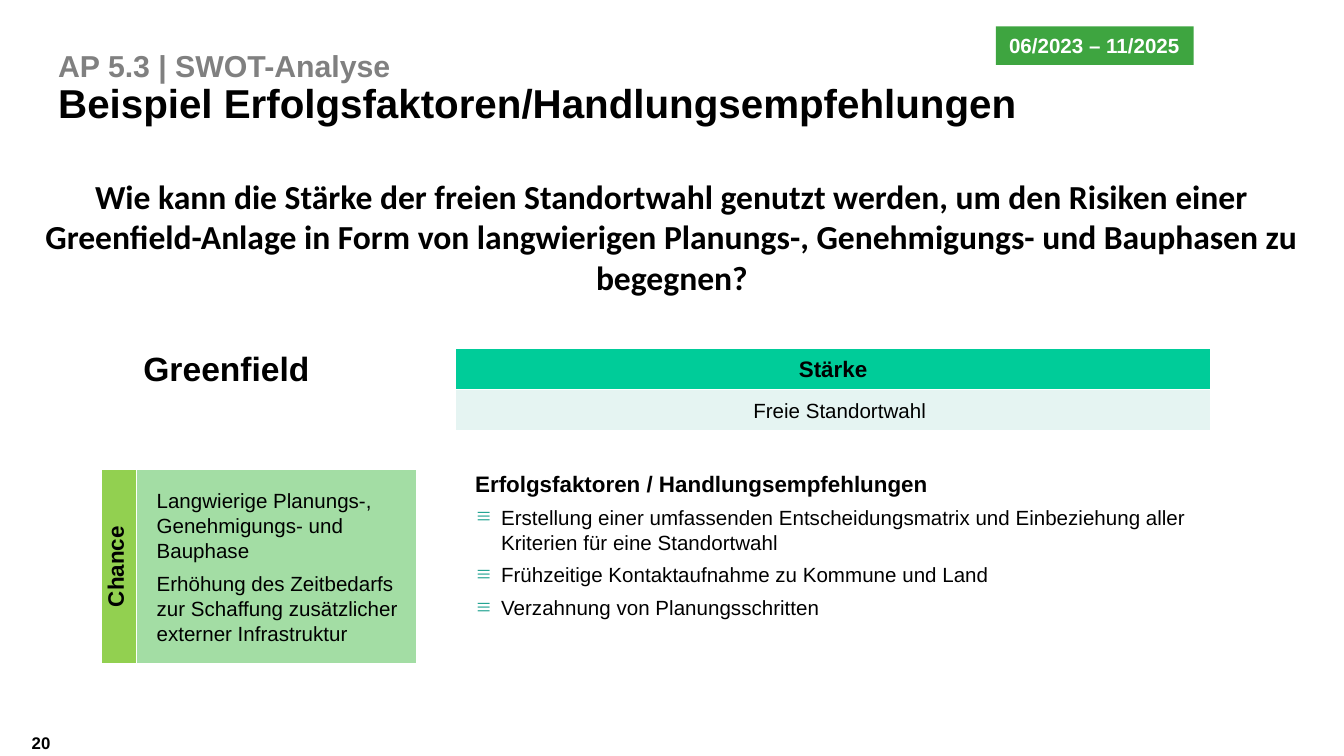
import lxml.etree
import pptx
import pptx.dml.color
import pptx.enum.shapes
import pptx.enum.text
import pptx.oxml.ns
import pptx.util

Cm = pptx.util.Cm
Pt = pptx.util.Pt
ALIGN = pptx.enum.text.PP_ALIGN
ANCHOR = pptx.enum.text.MSO_ANCHOR
qn = pptx.oxml.ns.qn

COLORS = {
    "black": "000000",
    "white": "FFFFFF",
    "gray": "808080",
    "badge": "3EA540",
    "strength": "00CC99",
    "strength_light": "E5F4F2",
    "chance": "92D050",
    "chance_light": "A3DDA4",
    "bullet": "009682",
}


def rgb(color):
    return pptx.dml.color.RGBColor.from_string(COLORS[color])


def write_text(paragraph, text, size=11, bold=False, color="black", font="Arial",
               align=ALIGN.LEFT, line_spacing=1.0, before=0, after=0,
               left=0, hanging=0, bullet=None):
    """Append a run; left and hanging are the paragraph's indents in cm."""
    paragraph.alignment = align
    paragraph.line_spacing = line_spacing
    paragraph.space_before, paragraph.space_after = Pt(before), Pt(after)
    properties = paragraph._p.get_or_add_pPr()
    properties.set("marL", str(Cm(left)))
    properties.set("indent", str(-Cm(hanging)))
    if bullet:
        bullet_color = lxml.etree.SubElement(properties, qn("a:buClr"))
        lxml.etree.SubElement(bullet_color, qn("a:srgbClr"), val=COLORS["bullet"])
        lxml.etree.SubElement(properties, qn("a:buChar"), char=bullet)
    run = paragraph.add_run()
    run.text = text
    run.font.size, run.font.bold, run.font.name = Pt(size), bold, font
    run.font.color.rgb = rgb(color)


class SlideBuilder:
    def __init__(self, slide):
        self.slide = slide

    def text_box(self, left, top, width, height, anchor=ANCHOR.TOP, margins=True):
        """Add an empty text box and return its first paragraph."""
        shape = self.slide.shapes.add_textbox(Cm(left), Cm(top), Cm(width), Cm(height))
        frame = shape.text_frame
        frame.word_wrap = True
        frame.vertical_anchor = anchor
        if not margins:
            frame.margin_left = frame.margin_right = 0
            frame.margin_top = frame.margin_bottom = 0
        return frame.paragraphs[0]

    def badge(self, text, left, top, width, height):
        shape = self.slide.shapes.add_shape(
            pptx.enum.shapes.MSO_SHAPE.RECTANGLE, Cm(left), Cm(top), Cm(width), Cm(height))
        shape.shadow.inherit = False
        shape.fill.solid()
        shape.fill.fore_color.rgb = rgb("badge")
        shape.line.fill.background()
        shape.text_frame.word_wrap = True
        write_text(shape.text_frame.paragraphs[0], text, bold=True, color="white")

    def table(self, left, top, columns, rows):
        """Add a table with white borders and neither fills nor text."""
        frame = self.slide.shapes.add_table(
            len(rows), len(columns), Cm(left), Cm(top), Cm(sum(columns)), Cm(sum(rows)))
        table = frame.table
        table.first_row = table.horz_banding = False
        for column, width in zip(table.columns, columns):
            column.width = Cm(width)
        for row, height in zip(table.rows, rows):
            row.height = Cm(height)
        for cell in table.iter_cells():
            cell.margin_left = cell.margin_right = Cm(0.13)
            cell.margin_top = cell.margin_bottom = 0
            cell.vertical_anchor = ANCHOR.MIDDLE
            properties = cell._tc.get_or_add_tcPr()
            for side in ("L", "R", "T", "B"):
                border = lxml.etree.SubElement(properties, qn(f"a:ln{side}"), w=str(Pt(1)))
                fill = lxml.etree.SubElement(border, qn("a:solidFill"))
                lxml.etree.SubElement(fill, qn("a:srgbClr"), val=COLORS["white"])
            cell.fill.background()
        return table

    def cell(self, cell, paragraphs, fill=None, **shared):
        """Fill a cell; paragraphs are pairs of text and format."""
        if fill:
            cell.fill.solid()
            cell.fill.fore_color.rgb = rgb(fill)
        frame = cell.text_frame
        for index, (text, style) in enumerate(paragraphs):
            paragraph = frame.add_paragraph() if index else frame.paragraphs[0]
            spacing = {"line_spacing": 1.1, "before": 2 if index else 0, "after": 2}
            write_text(paragraph, text, **{**spacing, **shared, **style})


def shrink_empty_cells(table):
    for cell in table.iter_cells():
        if not cell.text_frame.text:
            lxml.etree.SubElement(
                cell.text_frame.paragraphs[0]._p, qn("a:endParaRPr"), sz="1100")


def add_swot_table(builder):
    table = builder.table(1.91, 6.58, [0.67, 5.29, 0.73, 14.29], [0.78, 0.79, 0.72, 3.68])
    heading = {"size": 12, "bold": True}
    bullet = {"left": 0.74, "hanging": 0.48, "bullet": "≡"}

    builder.cell(table.cell(0, 1), [("Greenfield", {"size": 18, "bold": True})],
                 line_spacing=1.07)
    builder.cell(table.cell(0, 3), [("Stärke", heading)], fill="strength",
                 align=ALIGN.CENTER, line_spacing=1.07)
    builder.cell(table.cell(1, 3), [("Freie Standortwahl", {})], fill="strength_light",
                 align=ALIGN.CENTER, left=0.25)

    chance = table.cell(3, 0)
    builder.cell(chance, [("Chance", heading)], fill="chance", align=ALIGN.CENTER)
    chance._tc.get_or_add_tcPr().set("vert", "vert270")
    builder.cell(table.cell(3, 1), [
        ("Langwierige Planungs-, Genehmigungs- und Bauphase", {}),
        ("Erhöhung des Zeitbedarfs zur Schaffung zusätzlicher externer Infrastruktur", {}),
    ], fill="chance_light", left=0.25)

    recommendations = table.cell(3, 3)
    recommendations.vertical_anchor = ANCHOR.TOP
    builder.cell(recommendations, [
        ("Erfolgsfaktoren / Handlungsempfehlungen", {**heading, "left": 0.25}),
        ("Erstellung einer umfassenden Entscheidungsmatrix und Einbeziehung aller "
         "Kriterien für eine Standortwahl", bullet),
        ("Frühzeitige Kontaktaufnahme zu Kommune und Land", bullet),
        ("Verzahnung von Planungsschritten", bullet),
    ])
    shrink_empty_cells(table)


def main():
    presentation = pptx.Presentation()
    presentation.slide_width, presentation.slide_height = Cm(25.4), Cm(14.29)
    builder = SlideBuilder(presentation.slides.add_slide(presentation.slide_layouts[6]))

    add_swot_table(builder)

    page_number = builder.text_box(0.6, 13.49, 0.92, 1.1, ANCHOR.MIDDLE, margins=False)
    write_text(page_number, "20", size=9, bold=True)

    title = builder.text_box(1.1, 0.81, 19.08, 1.6, ANCHOR.BOTTOM, margins=False)
    write_text(title, "AP 5.3 | SWOT-Analyse", size=16.2, bold=True, color="gray",
               line_spacing=0.9)
    title.add_line_break()
    write_text(title, "Beispiel Erfolgsfaktoren/Handlungsempfehlungen", size=21.6,
               bold=True, line_spacing=0.9)

    builder.badge("06/2023 – 11/2025", 18.82, 0.5, 3.74, 0.73)

    question = builder.text_box(0.48, 3.2, 24.44, 2.57)
    write_text(question, "Wie kann die Stärke der freien Standortwahl genutzt werden, um den "
               "Risiken einer Greenfield-Anlage in Form von langwierigen Planungs-, "
               "Genehmigungs- und Bauphasen zu begegnen?",
               size=18, bold=True, font="Calibri", align=ALIGN.CENTER)

    presentation.save("out.pptx")


if __name__ == "__main__":
    main()
